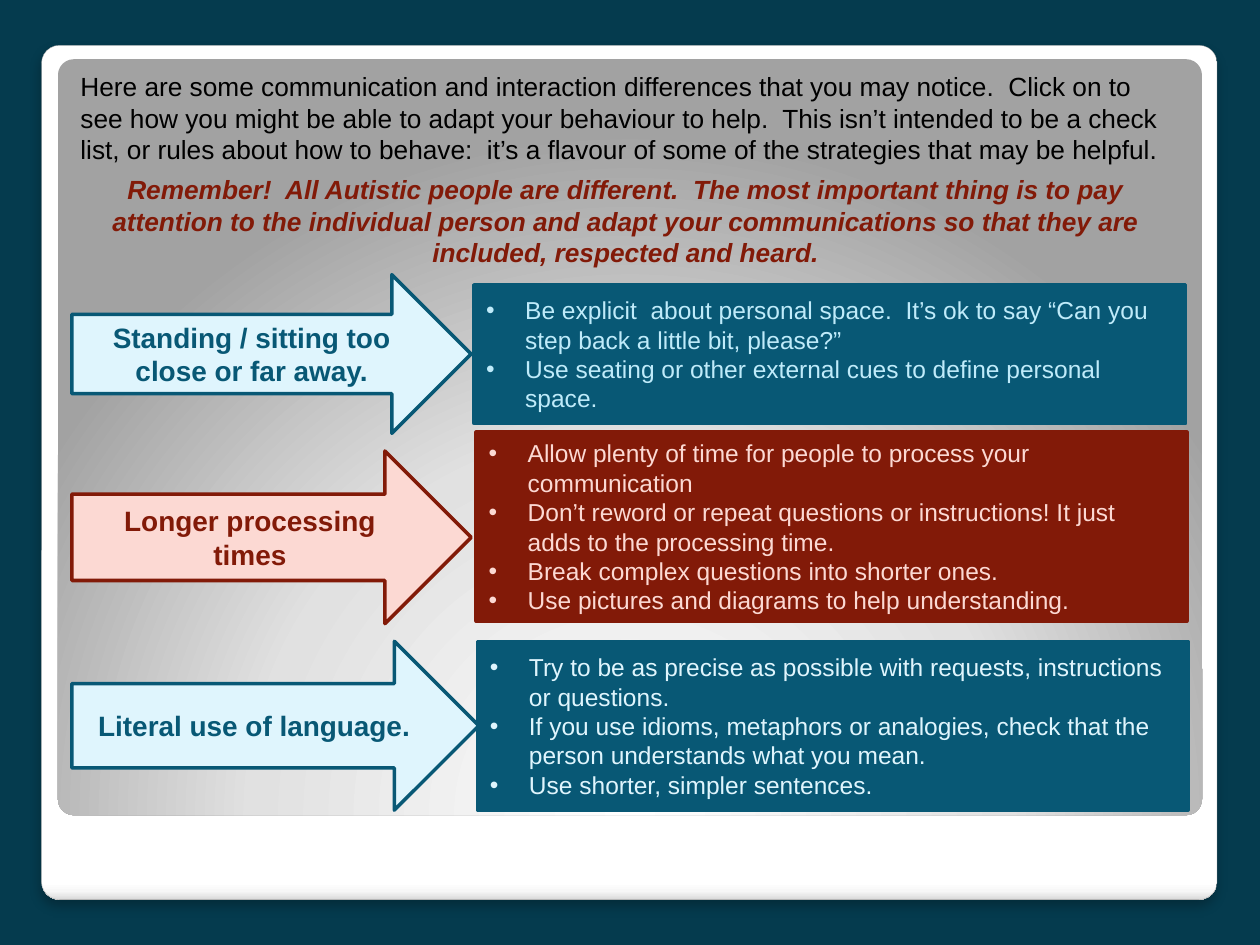
from lxml import etree
from pptx import Presentation
from pptx.dml.color import RGBColor
from pptx.enum.shapes import MSO_SHAPE
from pptx.enum.text import MSO_ANCHOR, PP_ALIGN
from pptx.oxml import parse_xml
from pptx.oxml.ns import qn
from pptx.util import Inches, Pt

ARROW, RECT, ROUNDED = MSO_SHAPE.RIGHT_ARROW, MSO_SHAPE.RECTANGLE, MSO_SHAPE.ROUNDED_RECTANGLE
CENTER, LEFT = PP_ALIGN.CENTER, PP_ALIGN.LEFT
MIDDLE = MSO_ANCHOR.MIDDLE
A_NS = "http://schemas.openxmlformats.org/drawingml/2006/main"
BLUE, PALE_BLUE, SKY = "085875", "DFF5FD", "BFEBFA"
RED, PALE_RED = "821A08", "FCD9D3"


def rgb(color):
    return RGBColor.from_string(color)


def write(shape, paragraphs, size, color, align, bold=False, italic=False, bullets=False):
    """Fill a shape with paragraphs in one common format."""
    tf = shape.text_frame
    tf.word_wrap = True
    tf.text = "\n".join(paragraphs)
    for p in tf.paragraphs:
        p.alignment = align
        font = p.runs[0].font
        font.name, font.size = "Arial", Pt(size)
        font.bold, font.italic = bold, italic
        font.color.rgb = rgb(color)
        if bullets:
            pPr = p._p.get_or_add_pPr()
            pPr.set("marL", str(Inches(0.31)))
            pPr.set("indent", str(Inches(-0.31)))
            etree.SubElement(pPr, qn("a:buFont")).set("typeface", "Arial")
            etree.SubElement(pPr, qn("a:buChar")).set("char", "•")


prs = Presentation()
prs.slide_width, prs.slide_height = Inches(10), Inches(7.5)
s = prs.slides.add_slide(prs.slide_layouts[6])
s.background.fill.solid()
s.background.fill.fore_color.rgb = rgb("053B4E")

# White card and grey panel, both with gradients
panels = [
    ((0.33, 0.36, 9.33, 6.78), [(0, "FFFFFF"), (98, "FFFFFF"), (99, "F7F7F7"), (100, "DADADA")],
     '<a:lin ang="5400000" scaled="0"/>'),
    ((0.46, 0.47, 9.08, 6), [(0, "FFFFFF"), (55, "E1E1E1"), (100, "A2A2A2")],
     '<a:path path="circle"><a:fillToRect l="50000" t="175000" r="50000" b="-75000"/></a:path>'),
]
for box, stops, direction in panels:
    panel = s.shapes.add_shape(ROUNDED, *map(Inches, box))
    panel.adjustments[0] = 0.021
    panel.shadow.inherit = False
    panel.line.fill.background()
    stop_xml = "".join(f'<a:gs pos="{pos * 1000}"><a:srgbClr val="{color}"/></a:gs>'
                       for pos, color in stops)
    panel._element.spPr.insert(2, parse_xml(
        f'<a:gradFill xmlns:a="{A_NS}" rotWithShape="1"><a:gsLst>{stop_xml}</a:gsLst>'
        f'{direction}</a:gradFill>'))

card = s.shapes[0]
card.line.color.rgb = rgb("A4A4A4")
card.line.width = Pt(0.16)
card._element.spPr.find(qn("a:effectLst")).append(parse_xml(
    f'<a:outerShdw xmlns:a="{A_NS}" blurRad="{Pt(6)}" dist="{Pt(4)}" dir="5400000" '
    'algn="tl" rotWithShape="0"><a:srgbClr val="000000"><a:alpha val="25000"/></a:srgbClr>'
    '</a:outerShdw>'))

# Introduction and reminder
intro = s.shapes.add_textbox(Inches(0.54), Inches(0.51), Inches(8.9), Inches(0.86))
write(intro, ["Here are some communication and interaction differences that you may notice.  "
              "Click on to see how you might be able to adapt your behaviour to help.  "
              "This isn’t intended to be a check list, or rules about how to behave:  "
              "it’s a flavour of some of the strategies that may be helpful."],
      15, "000000", LEFT)
reminder = s.shapes.add_textbox(Inches(0.52), Inches(1.33), Inches(8.89), Inches(0.86))
write(reminder, ["Remember!  All Autistic people are different.  The most important thing is "
                 "to pay attention to the individual person and adapt your communications "
                 "so that they are included, respected and heard."],
      15, RED, CENTER, bold=True, italic=True)

# Each difference: an arrow pointing to a box of strategies
differences = [
    ("Standing / sitting too close or far away.", (0.57, 2.18, 3.17, 1.26),
     (3.76, 2.26, 5.65, 1.1), BLUE, PALE_BLUE, SKY,
     ["Be explicit  about personal space.  It’s ok to say “Can you step back a little bit, please?”",
      "Use seating or other external cues to define personal space."]),
    ("Longer processing times", (0.57, 3.58, 3.17, 1.37),
     (3.78, 3.43, 5.64, 1.5), RED, PALE_RED, PALE_RED,
     ["Allow plenty of time for people to process your communication",
      "Don’t reword or repeat questions or instructions! It just adds to the processing time.",
      "Break complex questions into shorter ones.",
      "Use pictures and diagrams to help understanding."]),
    ("Literal use of language.", (0.57, 5.09, 3.23, 1.34),
     (3.79, 5.09, 5.64, 1.34), BLUE, PALE_BLUE, PALE_BLUE,
     ["Try to be as precise as possible with requests, instructions or questions.",
      "If you use idioms, metaphors or analogies, check that the person understands what you mean.",
      "Use shorter, simpler sentences."]),
]
for label, arrow_box, tips_box, dark, pale, tips_color, tips in differences:
    arrow = s.shapes.add_shape(ARROW, *map(Inches, arrow_box))
    tips_rect = s.shapes.add_shape(RECT, *map(Inches, tips_box))
    for shape, fill in ((arrow, pale), (tips_rect, dark)):
        shape.shadow.inherit = False
        shape.fill.solid()
        shape.fill.fore_color.rgb = rgb(fill)
        shape.line.color.rgb = rgb(dark)
        shape.line.width = Pt(2)
        shape.text_frame.vertical_anchor = MIDDLE
    write(arrow, [label], 16, dark, CENTER, bold=True)
    write(tips_rect, tips, 14, tips_color, LEFT, bullets=True)

prs.save("out.pptx")
